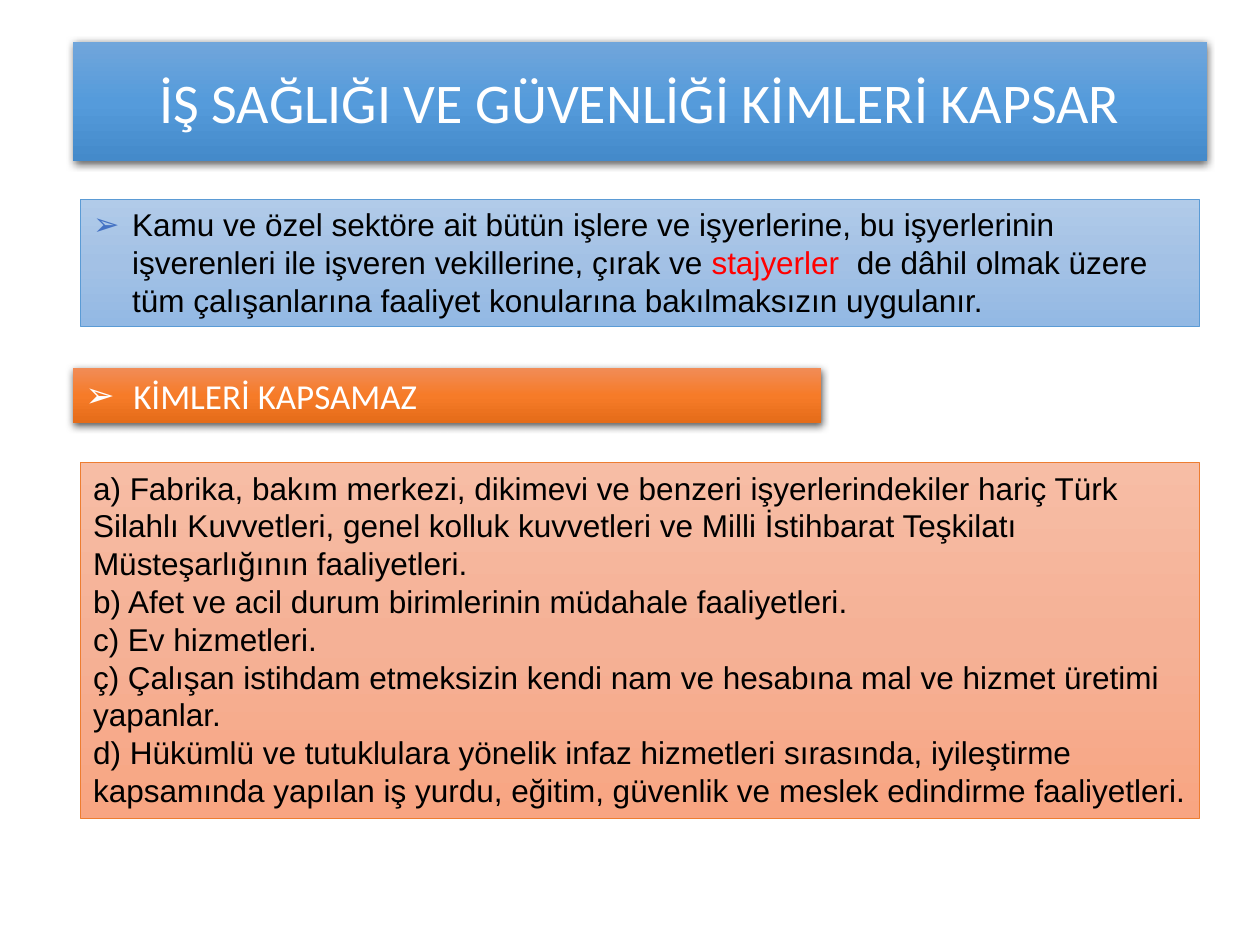
from copy import deepcopy
from dataclasses import dataclass
from typing import Optional

from lxml.etree import SubElement
from pptx import Presentation
from pptx.dml.color import RGBColor
from pptx.enum.shapes import MSO_SHAPE
from pptx.enum.text import MSO_ANCHOR as Anchor, PP_ALIGN as Align
from pptx.oxml.ns import qn
from pptx.util import Emu, Inches, Pt

WHITE = RGBColor(0xFF, 0xFF, 0xFF)
BLACK = RGBColor(0, 0, 0)
RED = RGBColor(0xFF, 0, 0)
BULLET_BLUE = RGBColor(0x44, 0x72, 0xC4)
BLUE_EDGE = RGBColor(0x5B, 0x9B, 0xD5)
ORANGE_EDGE = RGBColor(0xED, 0x7D, 0x31)
BLUE = (RGBColor(0x71, 0xA6, 0xDB), RGBColor(0x55, 0x9B, 0xDB), RGBColor(0x44, 0x8A, 0xCA))
PALE_BLUE = (RGBColor(0xB1, 0xCB, 0xE9), RGBColor(0xA3, 0xC1, 0xE5), RGBColor(0x93, 0xB9, 0xE4))
ORANGE = (RGBColor(0xF1, 0x8C, 0x57), RGBColor(0xF6, 0x7B, 0x28), RGBColor(0xE5, 0x6C, 0x19))
PALE_ORANGE = (RGBColor(0xF7, 0xBD, 0xA5), RGBColor(0xF5, 0xB1, 0x96), RGBColor(0xF8, 0xA5, 0x82))

SLIDE_W, SLIDE_H = Inches(10), Inches(7.5)
COLUMN, ROW = SLIDE_W / 100, SLIDE_H / 75
BANNER_LEFT, PANEL_LEFT = 5.8, 6.4
PANEL_COLUMNS = 100 - 2 * PANEL_LEFT + 1.6


@dataclass(frozen=True)
class Block:
    left: float
    top: float
    columns: float
    rows: float
    gradient: tuple[RGBColor, ...]
    edge: Optional[RGBColor] = None  # a block without an edge casts a shadow


TITLE = Block(BANNER_LEFT, 3.3, 90, 9.5, BLUE)
SCOPE = Block(PANEL_LEFT, 15.8, PANEL_COLUMNS, 10.1, PALE_BLUE, BLUE_EDGE)
EXEMPT_HEADING = Block(BANNER_LEFT, 29.2, 59.4, 4.4, ORANGE)
EXEMPTIONS = Block(PANEL_LEFT, 36.7, PANEL_COLUMNS, 28.3, PALE_ORANGE, ORANGE_EDGE)

SCOPE_TEXT = [[
    "Kamu ve özel sektöre ait bütün işlere ve işyerlerine, bu işyerlerinin "
    "işverenleri ile işveren vekillerine, çırak ve ",
    ("stajyerler ", RED),
    " de dâhil olmak üzere tüm çalışanlarına faaliyet konularına bakılmaksızın uygulanır.",
]]
EXEMPTION_TEXT = [
    ["a) Fabrika, bakım merkezi, dikimevi ve benzeri işyerlerindekiler hariç Türk "
     "Silahlı Kuvvetleri, genel kolluk kuvvetleri ve Milli İstihbarat Teşkilatı "
     "Müsteşarlığının faaliyetleri."],
    ["b) Afet ve acil durum birimlerinin müdahale faaliyetleri."],
    ["c) Ev hizmetleri."],
    ["ç) Çalışan istihdam etmeksizin kendi nam ve hesabına mal ve hizmet üretimi yapanlar."],
    ["d) Hükümlü ve tutuklulara yönelik infaz hizmetleri sırasında, iyileştirme "
     "kapsamında yapılan iş yurdu, eğitim, güvenlik ve meslek edindirme faaliyetleri."],
]


def paint_gradient(shape, colors: tuple[RGBColor, ...]) -> None:
    """Spread the colours evenly from top to bottom."""
    shape.fill.gradient()
    shape.fill.gradient_angle = 270
    stop_list = shape._element.spPr.find(".//" + qn("a:gsLst"))
    while len(stop_list) < len(colors):
        stop_list.append(deepcopy(stop_list[0]))
    for i, (stop, color) in enumerate(zip(shape.fill.gradient_stops, colors)):
        stop.color.rgb = color
        stop.position = i / (len(colors) - 1)


def cast_shadow(shape) -> None:
    effects = shape._element.spPr.find(qn("a:effectLst"))
    shadow = SubElement(effects, qn("a:outerShdw"), blurRad=str(Pt(4.5)),
                        dist=str(Pt(1.5)), dir="5400000", algn="ctr", rotWithShape="0")
    color = SubElement(shadow, qn("a:srgbClr"), val=str(BLACK))
    SubElement(color, qn("a:alpha"), val="63000")


def place(shape, block: Block):
    shape.left, shape.width = Emu(round(block.left * COLUMN)), Emu(round(block.columns * COLUMN))
    shape.top, shape.height = Emu(round(block.top * ROW)), Emu(round(block.rows * ROW))
    paint_gradient(shape, block.gradient)
    shape.shadow.inherit = False
    if block.edge is None:
        shape.line.fill.background()
        cast_shadow(shape)
    else:
        shape.line.color.rgb = block.edge
        shape.line.width = Pt(0.5)
    return shape


def add_bullet(paragraph, indent: float, color: RGBColor) -> None:
    props = paragraph._p.get_or_add_pPr()
    props.set("marL", str(Inches(indent)))
    props.set("indent", str(-Inches(indent)))
    SubElement(SubElement(props, qn("a:buClr")), qn("a:srgbClr"), val=str(color))
    SubElement(props, qn("a:buFont"), typeface="Arial")
    SubElement(props, qn("a:buChar"), char="➢")


def write(shape, paragraphs: list, *, size: float = 18, font: str = "Arial",
          color: RGBColor = BLACK, align: Align = Align.LEFT, anchor: Anchor = Anchor.TOP,
          indent: float = 0, bullet_color: Optional[RGBColor] = None) -> None:
    """Write paragraphs of runs; a run is a string or a (string, colour) pair."""
    frame = shape.text_frame
    frame.word_wrap = True
    frame.vertical_anchor = anchor
    for i, runs in enumerate(paragraphs):
        paragraph = frame.add_paragraph() if i else frame.paragraphs[0]
        paragraph.alignment = align
        if bullet_color is not None:
            add_bullet(paragraph, indent, bullet_color)
        for part in runs:
            words, run_color = (part, color) if isinstance(part, str) else part
            run = paragraph.add_run()
            run.text = words
            run.font.size = Pt(size)
            run.font.name = font
            run.font.color.rgb = run_color


def main() -> None:
    deck = Presentation()
    deck.slide_width, deck.slide_height = SLIDE_W, SLIDE_H
    slide = deck.slides.add_slide(deck.slide_layouts[5])

    def add_block(block: Block):
        return place(slide.shapes.add_shape(MSO_SHAPE.RECTANGLE, 0, 0, 0, 0), block)

    write(place(slide.shapes.title, TITLE), [["İŞ SAĞLIĞI VE GÜVENLİĞİ KİMLERİ KAPSAR"]],
          size=32, font="Calibri", color=WHITE, align=Align.CENTER, anchor=Anchor.MIDDLE)
    write(add_block(SCOPE), SCOPE_TEXT, indent=0.31, bullet_color=BULLET_BLUE)
    write(add_block(EXEMPT_HEADING), [["KİMLERİ KAPSAMAZ"]], size=20, font="Calibri",
          color=WHITE, indent=0.38, bullet_color=WHITE)
    write(add_block(EXEMPTIONS), EXEMPTION_TEXT)
    deck.save("out.pptx")


if __name__ == "__main__":
    main()
